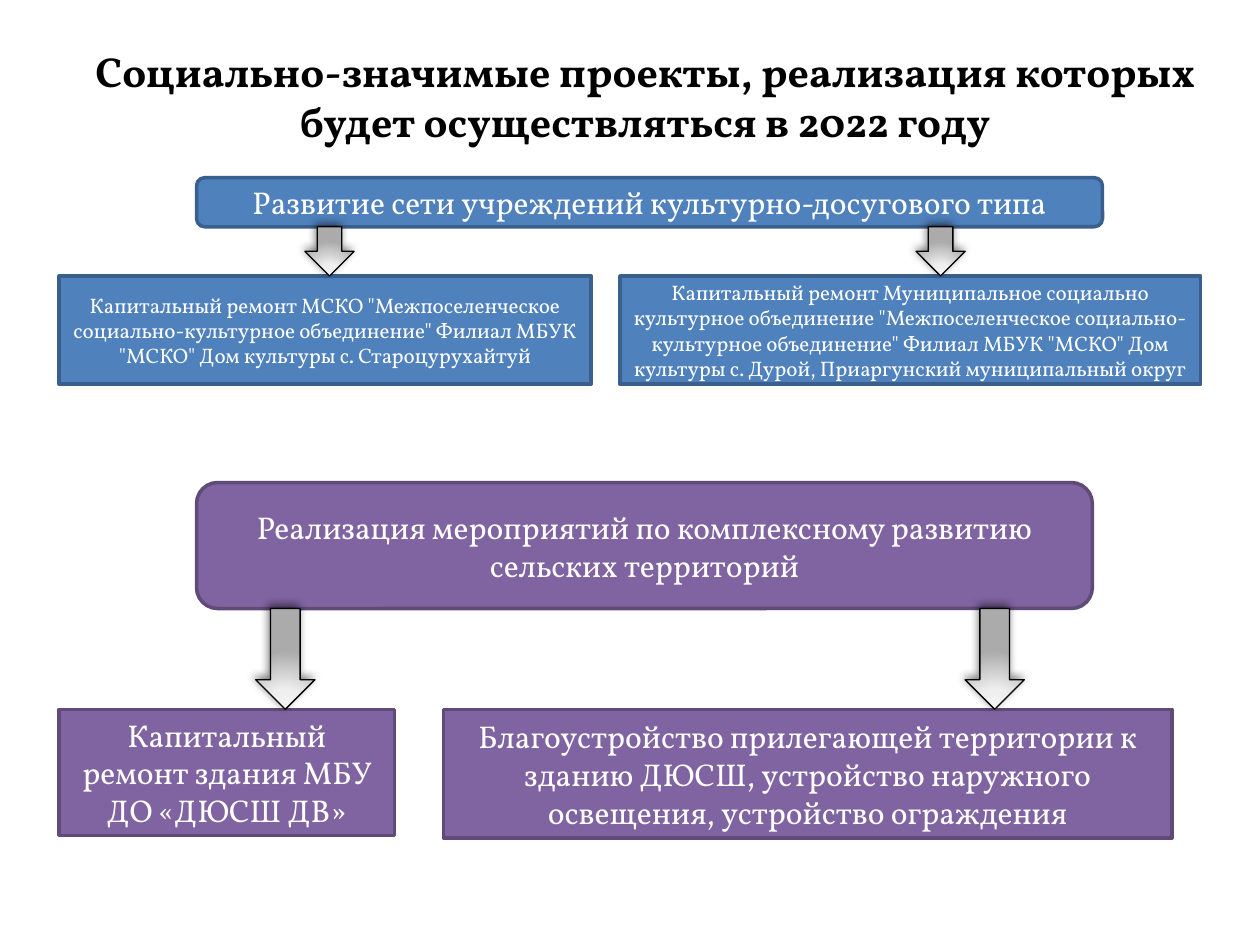
"""Builds a slide of socially significant projects planned for 2022."""
from pptx import Presentation, util as u
from pptx.dml.color import RGBColor
from pptx.enum import shapes, text
from pptx.oxml import parse_xml
from pptx.oxml.ns import nsdecls

FONT = "Vollkorn"
COLORS = {
    "black": "000000", "white": "FFFFFF",
    "blue": "4F81BD", "blue_line": "3A5F8C",
    "purple": "8064A2", "purple_line": "5F4A78",
}
ARROW_STOPS = [(0, "F4F4F4"), (34, "EFEFEF"), (100, "ABABAB")]
TITLE = "Социально-значимые проекты, реализация которых будет осуществляться в 2022 году"
PROGRAMMES = [
    {
        "color": "blue", "size": 12,
        "header": ("Развитие сети учреждений культурно-досугового типа",
                   (1.56, 1.41, 7.19, 0.39)),
        "top": 2.19,
        "projects": [
            ('Капитальный ремонт МСКО "Межпоселенческое социально-культурное объединение" '
             'Филиал МБУК "МСКО" Дом культуры с. Староцурухайтуй', 0.47, 4.22, 0.86),
            ('Капитальный ремонт Муниципальное социально культурное объединение '
             '"Межпоселенческое социально-культурное объединение" Филиал МБУК "МСКО" '
             'Дом культуры с. Дурой, Приаргунский муниципальный округ', 4.92, 4.61, 0.86),
        ],
        "arrow_width": 0.39, "arrow_lefts": (2.42, 7.27),
    },
    {
        "color": "purple", "size": 18,
        "header": ("Реализация мероприятий по комплексному развитию сельских территорий",
                   (1.56, 3.83, 7.11, 1)),
        "top": 5.63,
        "projects": [
            ("Капитальный ремонт здания МБУ ДО «ДЮСШ ДВ»", 0.47, 2.66, 1),
            ("Благоустройство прилегающей территории к зданию ДЮСШ, "
             "устройство наружного освещения, устройство ограждения", 3.52, 5.78, 1.02),
        ],
        "arrow_width": 0.47, "arrow_lefts": (2.03, 7.66),
    },
]


def color(name):
    return RGBColor.from_string(COLORS[name])


def write(box, words, size, tint, bold=False):
    box.text_frame.word_wrap = True
    para = box.text_frame.paragraphs[0]
    para.alignment = text.PP_ALIGN.CENTER
    span = para.add_run()
    span.text = words
    span.font.name, span.font.size, span.font.bold = FONT, u.Pt(size), bold
    span.font.color.rgb = color(tint)


def add_shape(page, kind, place, line, width):
    box = page.shapes.add_shape(kind, *map(u.Inches, place))
    box.shadow.inherit = False
    box.line.color.rgb = color(line)
    box.line.width = u.Pt(width)
    return box


def add_box(page, kind, place, words, size, fill):
    box = add_shape(page, kind, place, fill + "_line", 2)
    box.fill.solid()
    box.fill.fore_color.rgb = color(fill)
    box.text_frame.vertical_anchor = text.MSO_ANCHOR.MIDDLE
    write(box, words, size, "white")


def add_arrow(page, place):
    arrow = add_shape(page, shapes.MSO_SHAPE.DOWN_ARROW, place, "black", 0.75)
    stops = "".join(f'<a:gs pos="{pos * 1000}"><a:srgbClr val="{tint}"/></a:gs>'
                    for pos, tint in ARROW_STOPS)
    properties = arrow._element.spPr
    properties.insert(2, parse_xml(
        f'<a:gradFill {nsdecls("a")} rotWithShape="1"><a:gsLst>{stops}</a:gsLst>'
        '<a:path path="circle"><a:fillToRect l="50000" t="155000" r="50000" b="-55000"/>'
        '</a:path></a:gradFill>'))
    properties.find("{*}effectLst").append(parse_xml(
        f'<a:outerShdw {nsdecls("a")} blurRad="{u.Pt(5)}" dist="{u.Pt(2)}" '
        f'dir="{245 * 60000}" rotWithShape="0"><a:srgbClr val="{COLORS["black"]}">'
        '<a:alpha val="50000"/></a:srgbClr></a:outerShdw>'))


def add_programme(page, programme):
    words, place = programme["header"]
    tint, top = programme["color"], programme["top"]
    add_box(page, shapes.MSO_SHAPE.ROUNDED_RECTANGLE, place, words, 18, tint)
    for words, left, width, height in programme["projects"]:
        add_box(page, shapes.MSO_SHAPE.RECTANGLE, (left, top, width, height),
                words, programme["size"], tint)
    bottom = place[1] + place[3]
    for left in programme["arrow_lefts"]:
        add_arrow(page, (left, bottom, programme["arrow_width"], top - bottom))


def main():
    deck = Presentation()
    deck.slide_width, deck.slide_height = u.Inches(10), u.Inches(7.5)
    page = deck.slides.add_slide(deck.slide_layouts[5])
    title = page.shapes.title
    title.left, title.top, title.width, title.height = map(u.Inches, (0.47, 0.31, 9.3, 0.91))
    title.text_frame.auto_size = text.MSO_AUTO_SIZE.SHAPE_TO_FIT_TEXT
    title.text_frame.vertical_anchor = text.MSO_ANCHOR.TOP
    write(title, TITLE, 24, "black", bold=True)
    for programme in PROGRAMMES:
        add_programme(page, programme)
    deck.save("out.pptx")


if __name__ == "__main__":
    main()
